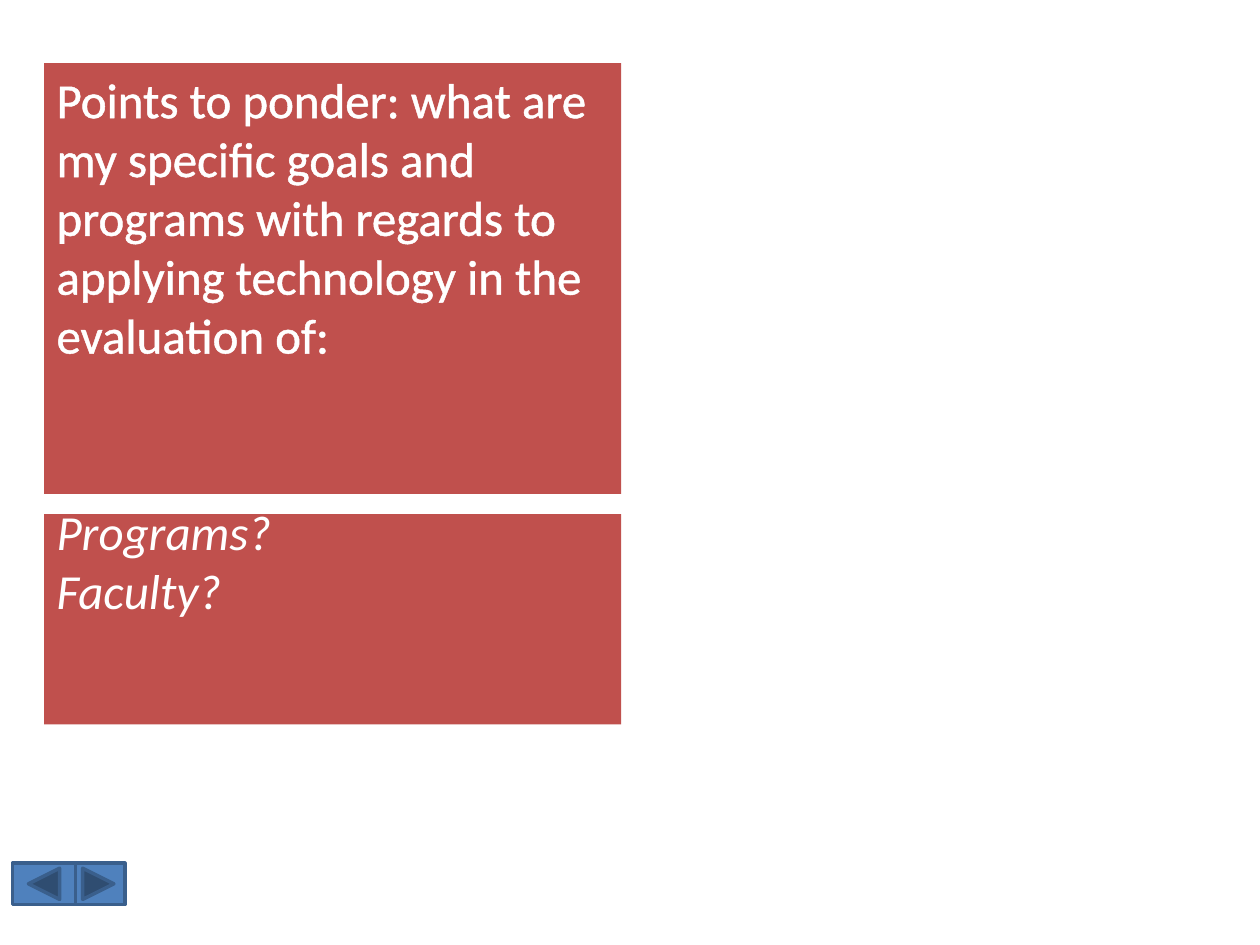
from lxml.etree import SubElement
from pptx import Presentation
from pptx.dml.color import RGBColor
from pptx.enum.shapes import MSO_SHAPE as Preset
from pptx.enum.text import MSO_ANCHOR as Anchor, PP_ALIGN as Align
from pptx.oxml.ns import qn
from pptx.util import Inches, Pt

WIDTH, HEIGHT = 10, 7.5
RED, BLUE, NAVY, WHITE = "C0504D", "4F81BD", "3A5F8C", "FFFFFF"
PANEL_LEFT, PANEL_WIDTH = 0.35, 4.58
BUTTON_TOP, BUTTON_HEIGHT = 6.85, 0.33
QUESTION = ("Points to ponder: what are my specific goals and programs with "
            "regards to applying technology in the evaluation of:")


def color(hex_value):
    return RGBColor.from_string(hex_value)


def add_filled(page, preset, place, fill):
    shape = page.shapes.add_shape(preset, *map(Inches, place))
    shape.shadow.inherit = False
    shape.fill.solid()
    shape.fill.fore_color.rgb = color(fill)
    return shape


def outline_text(span, hex_value, width):
    """Give the letters a thin solid outline."""
    line = SubElement(span.font._element, qn("a:ln"), w=str(Pt(width)))
    fill = SubElement(line, qn("a:solidFill"))
    SubElement(fill, qn("a:srgbClr"), val=hex_value)
    span.font._element.insert(0, line)


def add_panel(page, top, height, lines, frame_format, italic=None, outline=None):
    box = add_filled(page, Preset.RECTANGLE,
                     (PANEL_LEFT, top, PANEL_WIDTH, height), RED)
    box.line.fill.background()
    frame = box.text_frame
    for name, value in {"word_wrap": True, **frame_format}.items():
        setattr(frame, name, value)
    font_format = {"name": "Calibri", "size": Pt(28), "italic": italic}
    for index, text in enumerate(lines):
        para = frame.add_paragraph() if index else frame.paragraphs[0]
        para.alignment = Align.LEFT
        span = para.add_run()
        span.text = text
        for name, value in font_format.items():
            setattr(span.font, name, value)
        span.font.color.rgb = color(WHITE)
        if outline:
            outline_text(span, WHITE, outline)


def add_button(page, preset, left, width):
    button = add_filled(page, preset,
                        (left, BUTTON_TOP, width, BUTTON_HEIGHT), BLUE)
    button.line.color.rgb = color(NAVY)
    button.line.width = Pt(2)


def main():
    deck = Presentation()
    deck.slide_width, deck.slide_height = Inches(WIDTH), Inches(HEIGHT)
    page = deck.slides.add_slide(deck.slide_layouts[6])
    add_panel(page, 0.5, 3.42, [QUESTION],
              {"vertical_anchor": Anchor.TOP}, outline=1.45)
    # The deep bottom margin lifts the two lines to the top of the panel.
    add_panel(page, 4.08, 1.67, ["Programs?", "Faculty?"],
              {"vertical_anchor": Anchor.MIDDLE, "margin_top": 0,
               "margin_bottom": Inches(0.93)}, italic=True)
    add_button(page, Preset.ACTION_BUTTON_FORWARD_OR_NEXT, 0.57, 0.42)
    add_button(page, Preset.ACTION_BUTTON_BACK_OR_PREVIOUS, 0.1, 0.5)
    deck.save("out.pptx")


if __name__ == "__main__":
    main()
